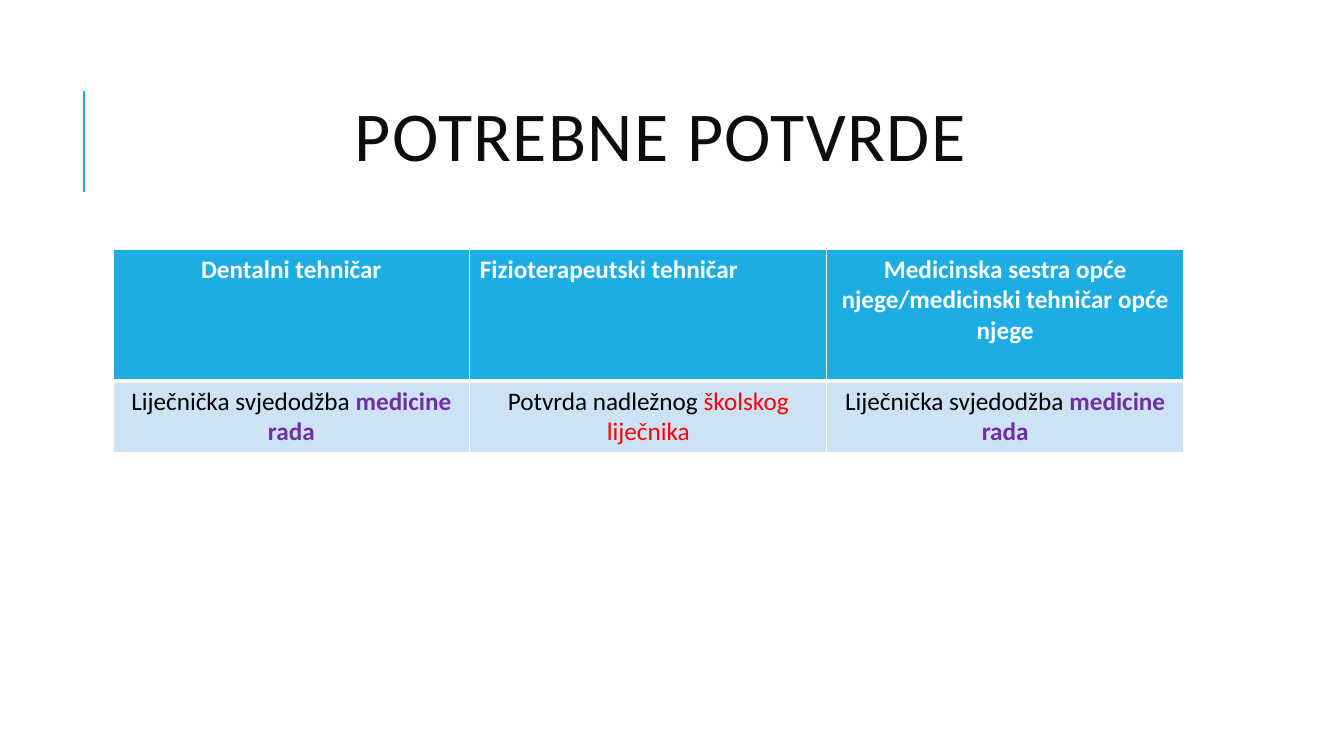
from dataclasses import dataclass

from lxml import etree
from pptx import Presentation
from pptx import util as u
from pptx.dml.color import RGBColor
from pptx.enum import shapes, text
from pptx.oxml.ns import qn


@dataclass(frozen=True)
class Theme:
    font: str = "Calibri"
    accent: str = "1CADE4"
    band: str = "CDE3F5"
    white: str = "FFFFFF"
    black: str = "000000"
    title: str = "0D0D0D"
    purple: str = "7030A0"
    red: str = "FF0000"
    title_size: int = 50
    cell_size: int = 18


@dataclass(frozen=True)
class Run:
    text: str
    color: str
    bold: bool = False


@dataclass(frozen=True)
class Cell:
    runs: tuple[Run, ...]
    fill: str
    align: text.PP_ALIGN = text.PP_ALIGN.CENTER


THEME = Theme()


def header(label: str, align: text.PP_ALIGN = text.PP_ALIGN.CENTER) -> Cell:
    return Cell((Run(label, THEME.white, True),), THEME.accent, align)


def certificate(kind: str, issuer: str, color: str, bold: bool) -> Cell:
    return Cell((Run(kind, THEME.black), Run(issuer, color, bold)), THEME.band)


MEDICAL = certificate("Liječnička svjedodžba ", "medicine rada", THEME.purple, True)
SCHOOL = certificate("Potvrda nadležnog ", "školskog liječnika", THEME.red, False)
ROWS = (
    (header("Dentalni tehničar"),
     header("Fizioterapeutski tehničar", text.PP_ALIGN.LEFT),
     header("Medicinska sestra opće njege/medicinski tehničar opće njege")),
    (MEDICAL, SCHOOL, MEDICAL),
)
ROW_HEIGHTS = (1.31, 0.71)
COLUMN_WIDTH = 3.54


def add_run(p, run: Run, size: int):
    r = p.add_run()
    r.text = run.text
    formats = {"name": THEME.font, "size": u.Pt(size), "bold": run.bold}
    for name, value in formats.items():
        setattr(r.font, name, value)
    r.font.color.rgb = RGBColor.from_string(run.color)
    return r


def add_borders(cell, widths: dict[str, float]) -> None:
    tc_pr = cell._tc.get_or_add_tcPr()
    for side, width in widths.items():
        ln = etree.SubElement(tc_pr, qn(f"a:ln{side}"), w=str(u.Pt(width)))
        fill = etree.SubElement(ln, qn("a:solidFill"))
        etree.SubElement(fill, qn("a:srgbClr"), val=THEME.white)


def fill_cell(cell, content: Cell, borders: dict[str, float]) -> None:
    add_borders(cell, borders)
    cell.fill.solid()
    cell.fill.fore_color.rgb = RGBColor.from_string(content.fill)
    p = cell.text_frame.paragraphs[0]
    p.alignment = content.align
    for run in content.runs:
        add_run(p, run, THEME.cell_size)


def add_accent_line(s) -> None:
    line = s.shapes.add_connector(
        shapes.MSO_CONNECTOR.STRAIGHT,
        u.Inches(0.83), u.Inches(1.9), u.Inches(0.83), u.Inches(0.9))
    line.line.color.rgb = RGBColor.from_string(THEME.accent)
    line.line.width = u.Pt(1.5)
    etree.SubElement(line._element.spPr, qn("a:effectLst"))


def format_title(s, label: str) -> None:
    sp = s.shapes.title
    box = {"left": 1.12, "top": 0.64, "width": 10.86, "height": 1.53}
    for name, value in box.items():
        setattr(sp, name, u.Inches(value))
    tf = sp.text_frame
    frame = {"word_wrap": True, "auto_size": text.MSO_AUTO_SIZE.NONE,
             "vertical_anchor": text.MSO_ANCHOR.MIDDLE}
    for name, value in frame.items():
        setattr(tf, name, value)
    p = tf.paragraphs[0]
    p.alignment = text.PP_ALIGN.CENTER
    p.line_spacing = 0.8
    r = add_run(p, Run(label, THEME.title), THEME.title_size)
    r._r.get_or_add_rPr().set("spc", "100")


def add_certificate_table(s) -> None:
    columns = len(ROWS[0])
    table = s.shapes.add_table(
        len(ROWS), columns, u.Inches(1.12), u.Inches(2.47),
        u.Inches(COLUMN_WIDTH * columns), u.Inches(sum(ROW_HEIGHTS))).table
    table.horz_banding = False
    for column in table.columns:
        column.width = u.Inches(COLUMN_WIDTH)
    for i, (row, height) in enumerate(zip(ROWS, ROW_HEIGHTS)):
        table.rows[i].height = u.Inches(height)
        # The rule under the header is thicker than the others
        borders = {"L": 1, "R": 1, "T": 1 if i == 0 else 3, "B": 3 if i == 0 else 1}
        for j, content in enumerate(row):
            fill_cell(table.cell(i, j), content, borders)


def main() -> None:
    prs = Presentation()
    prs.slide_width, prs.slide_height = u.Inches(13.33), u.Inches(7.5)
    s = prs.slides.add_slide(prs.slide_layouts[5])

    # Heading
    add_accent_line(s)
    format_title(s, "POTREBNE POTVRDE")

    # Certificates by profession
    add_certificate_table(s)

    prs.save("out.pptx")


if __name__ == "__main__":
    main()
